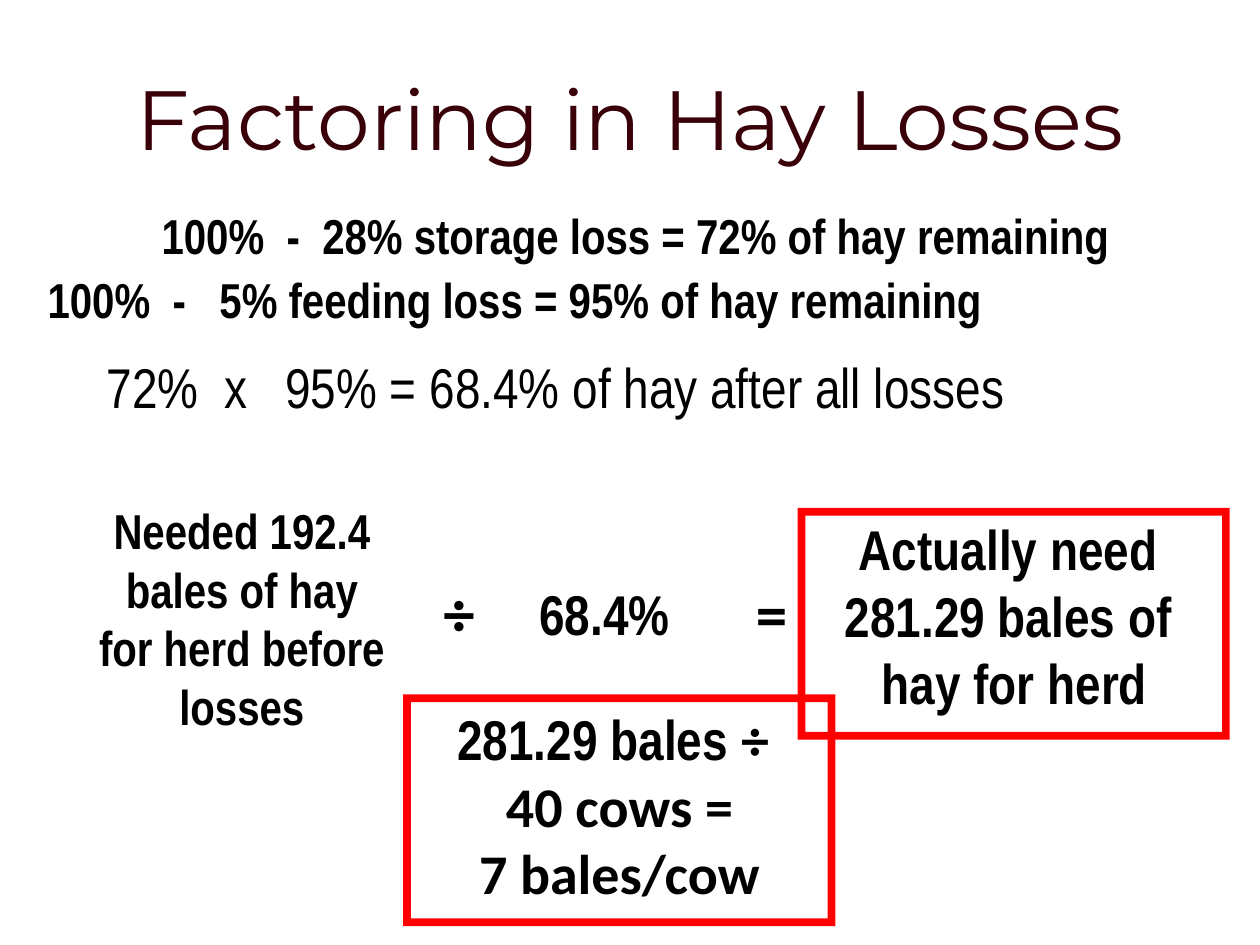
from pptx import Presentation
from pptx.dml.color import RGBColor
from pptx.enum.shapes import MSO_SHAPE
from pptx.enum.text import MSO_ANCHOR, MSO_AUTO_SIZE, PP_ALIGN
from pptx.util import Cm, Pt

LEFT, CENTER = PP_ALIGN.LEFT, PP_ALIGN.CENTER
MIDDLE = MSO_ANCHOR.MIDDLE
GROW, FIXED = MSO_AUTO_SIZE.SHAPE_TO_FIT_TEXT, MSO_AUTO_SIZE.NONE
FRAME = MSO_SHAPE.FRAME
NARROW, SANS, HEAD = "Arial Narrow", "Calibri", "Montserrat"


def color(code):
    return RGBColor.from_string(code)


def style(font, size, face, bold, code):
    font.size = Pt(size)
    font.name = face
    font.bold = bold
    font.color.rgb = color(code)


def add_text(slide, box, lines, size, face=NARROW, bold=True, align=LEFT,
             wrap=False, fit=GROW, code="000000"):
    frame = slide.shapes.add_textbox(*map(Cm, box)).text_frame
    frame.word_wrap = wrap
    frame.auto_size = fit
    for i, line in enumerate(lines):
        para = frame.paragraphs[0] if i == 0 else frame.add_paragraph()
        para.text = line
        para.alignment = align
        style(para.font, size, face, bold, code)
    return frame


def add_frame(slide, left, top):
    shape = slide.shapes.add_shape(FRAME, Cm(left), Cm(top), Cm(8.71), Cm(4.67))
    shape.adjustments[0] = 0.033
    shape.shadow.inherit = False
    shape.fill.solid()
    shape.fill.fore_color.rgb = color("FF0000")
    shape.line.fill.background()


def add_losses(slide):
    add_text(slide, (0.2, 4.01, 25.2, 1.45),
             ["100%  -  28% storage loss = 72% of hay remaining"],
             28, align=CENTER, wrap=True)
    add_text(slide, (0.71, 5.31, 24.08, 1.45),
             ["100%  -   5% feeding loss = 95% of hay remaining"], 28, wrap=True)
    add_text(slide, (1.9, 6.98, 20.93, 1.63),
             ["72%  x   95% = 68.4% of hay after all losses"], 32, bold=False)


def add_need(slide):
    add_text(slide, (1.65, 9.96, 6.45, 5.05),
             ["Needed 192.4", "bales of hay", "for herd before", "losses"],
             28, align=CENTER)
    add_text(slide, (8.69, 11.43, 1.22, 1.8), ["÷"], 36, SANS)
    add_text(slide, (10.62, 11.56, 3.51, 1.63), ["68.4%"], 32)
    add_text(slide, (14.99, 11.46, 1.27, 1.8), ["="], 36, SANS)
    add_text(slide, (16.66, 10.24, 7.59, 4.37),
             ["Actually need ", "281.29 bales of ", "hay for herd"],
             32, align=CENTER)
    add_frame(slide, 16.08, 10.24)


def add_share(slide):
    add_frame(slide, 8.13, 14)
    share = add_text(slide, (8.31, 14.07, 8.36, 5.74),
                     ["281.29 bales ", "40 cows =", "7 bales/cow"],
                     32, SANS, align=CENTER)
    first = share.paragraphs[0]
    first.runs[0].font.name = NARROW
    first.add_run().text = "÷ "


def main():
    deck = Presentation()
    deck.slide_width, deck.slide_height = Cm(25.4), Cm(19.05)
    slide = deck.slides.add_slide(deck.slide_layouts[6])
    title = add_text(slide, (1.27, 0.76, 22.86, 3.18),
                     ["Factoring in Hay Losses"], 48, HEAD, False, CENTER,
                     wrap=True, fit=FIXED, code="390009")
    title.vertical_anchor = MIDDLE
    add_losses(slide)
    add_need(slide)
    add_share(slide)
    deck.save("out.pptx")


if __name__ == "__main__":
    main()
